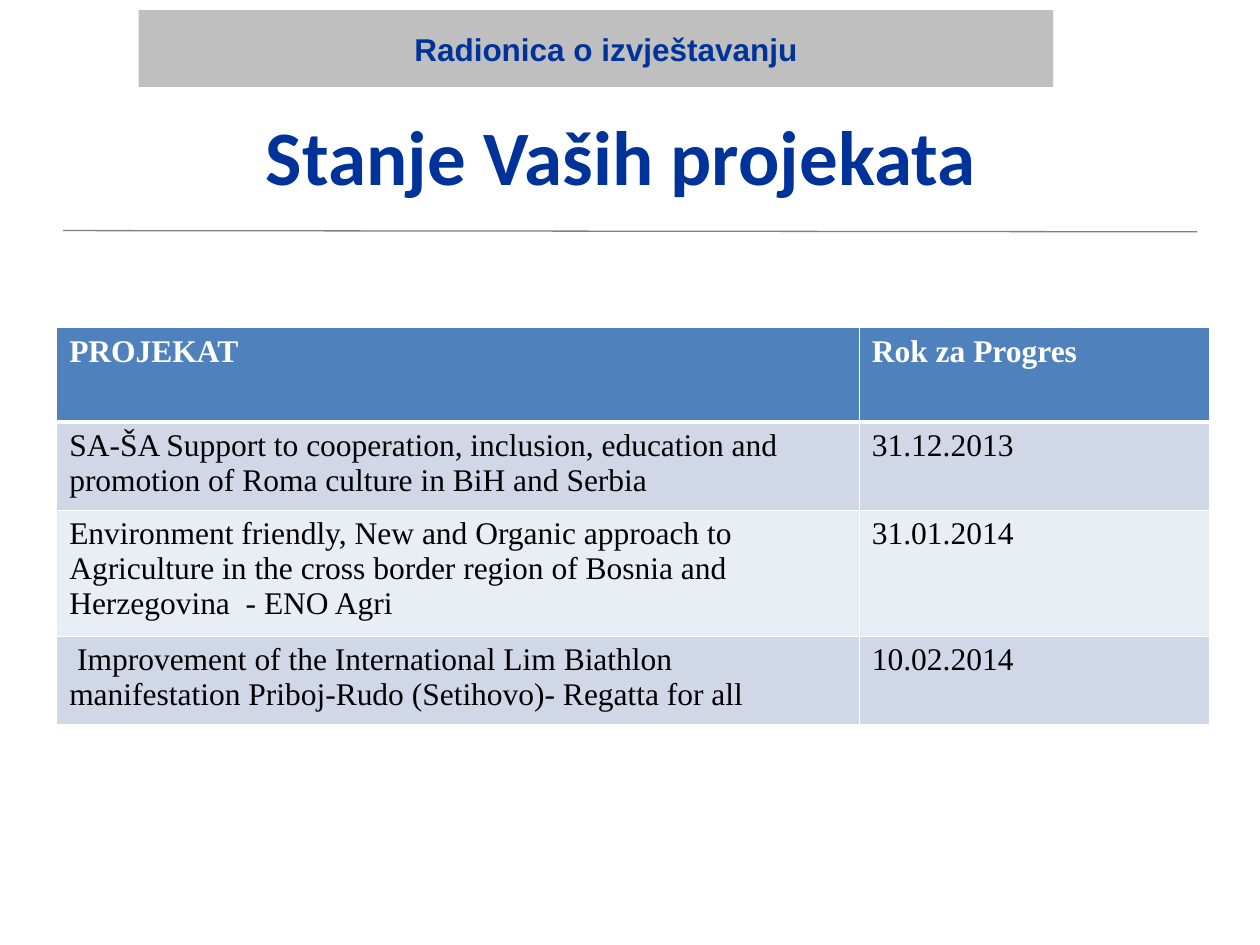
from lxml import etree
from pptx import Presentation
from pptx.dml.color import RGBColor
from pptx.enum.shapes import MSO_CONNECTOR, MSO_SHAPE
from pptx.enum.text import MSO_ANCHOR, PP_ALIGN
from pptx.oxml.ns import qn
from pptx.util import Inches, Pt

RECT = MSO_SHAPE.RECTANGLE
STRAIGHT = MSO_CONNECTOR.STRAIGHT
LEFT, CENTER = PP_ALIGN.LEFT, PP_ALIGN.CENTER
TOP = MSO_ANCHOR.TOP

NAVY, WHITE, BLACK = "003399", "FFFFFF", "000000"
HEADER_FILL = "4F81BD"
BAND_FILLS = ["D0D8E8", "E9EDF4"]

COL_WIDTHS = [6.37, 2.78]
ROW_HEIGHTS = [0.75, 0.7, 1, 0.7]
PROJECTS = [
    ("PROJEKAT", "Rok za Progres"),
    ("SA-ŠA Support to cooperation, inclusion, education and promotion "
     "of Roma culture in BiH and Serbia", "31.12.2013"),
    ("Environment friendly, New and Organic approach to Agriculture in the "
     "cross border region of Bosnia and Herzegovina  - ENO Agri", "31.01.2014"),
    (" Improvement of the International Lim Biathlon manifestation "
     "Priboj-Rudo (Setihovo)- Regatta for all", "10.02.2014"),
]


def rgb(color):
    return RGBColor.from_string(color)


def write(tf, text, font, size, color, bold=False, align=LEFT):
    p = tf.paragraphs[0]
    p.text = text
    p.alignment = align
    f = p.runs[0].font
    f.name, f.size, f.bold = font, Pt(size), bold
    f.color.rgb = rgb(color)


def add_text(slide, box, text, font, size, align=LEFT, wrap=True):
    tf = slide.shapes.add_textbox(*map(Inches, box)).text_frame
    tf.word_wrap = wrap
    tf.vertical_anchor = TOP
    write(tf, text, font, size, NAVY, True, align)


def add_banner(slide, box, color):
    sp = slide.shapes.add_shape(RECT, *map(Inches, box))
    sp.shadow.inherit = False
    sp.fill.solid()
    sp.fill.fore_color.rgb = rgb(color)
    sp.line.fill.background()


def add_rule(slide, ends, color, width):
    line = slide.shapes.add_connector(STRAIGHT, *map(Inches, ends))
    line.line.color.rgb = rgb(color)
    line.line.width = Pt(width)
    etree.SubElement(line._element.spPr, qn("a:effectLst"))


def set_borders(cell, bottom):
    tcPr = cell._tc.get_or_add_tcPr()
    widths = {"a:lnL": 1, "a:lnR": 1, "a:lnT": 1, "a:lnB": bottom}
    for i, (tag, width) in enumerate(widths.items()):
        ln = etree.Element(qn(tag), w=str(Pt(width)))
        fill = etree.SubElement(ln, qn("a:solidFill"))
        etree.SubElement(fill, qn("a:srgbClr"), val=WHITE)
        tcPr.insert(i, ln)  # borders come before the fill


def add_project_table(slide, left, top):
    frame = slide.shapes.add_table(
        len(PROJECTS), len(COL_WIDTHS), Inches(left), Inches(top),
        Inches(sum(COL_WIDTHS)), Inches(sum(ROW_HEIGHTS)))
    table = frame.table
    for col, width in zip(table.columns, COL_WIDTHS):
        col.width = Inches(width)
    for i, (row, height) in enumerate(zip(table.rows, ROW_HEIGHTS)):
        row.height = Inches(height)
        header = i == 0
        for cell, text in zip(row.cells, PROJECTS[i]):
            write(cell.text_frame, text, "Times New Roman", 18,
                  WHITE if header else BLACK, header)
            cell.fill.solid()
            cell.fill.fore_color.rgb = rgb(
                HEADER_FILL if header else BAND_FILLS[(i - 1) % 2])
            set_borders(cell, 3 if header else 1)


def main():
    prs = Presentation()
    prs.slide_width, prs.slide_height = Inches(10), Inches(7.5)
    slide = prs.slides.add_slide(prs.slide_layouts[6])

    # Banner, title and rule
    add_banner(slide, (1.1, 0.08, 7.26, 0.61), "BFBFBF")
    add_text(slide, (0.5, 0.81, 9, 0.5), "Stanje Vaših projekata ",
             "Calibri", 44, CENTER)
    add_rule(slide, (0.5, 1.83, 9.5, 1.84), "808080", 0.75)
    add_text(slide, (3.19, 0.19, 3.27, 0.4), "Radionica o izvještavanju",
             "Arial", 18, wrap=False)

    # Projects and their deadlines
    add_project_table(slide, 0.45, 2.6)

    prs.save("out.pptx")


if __name__ == "__main__":
    main()
